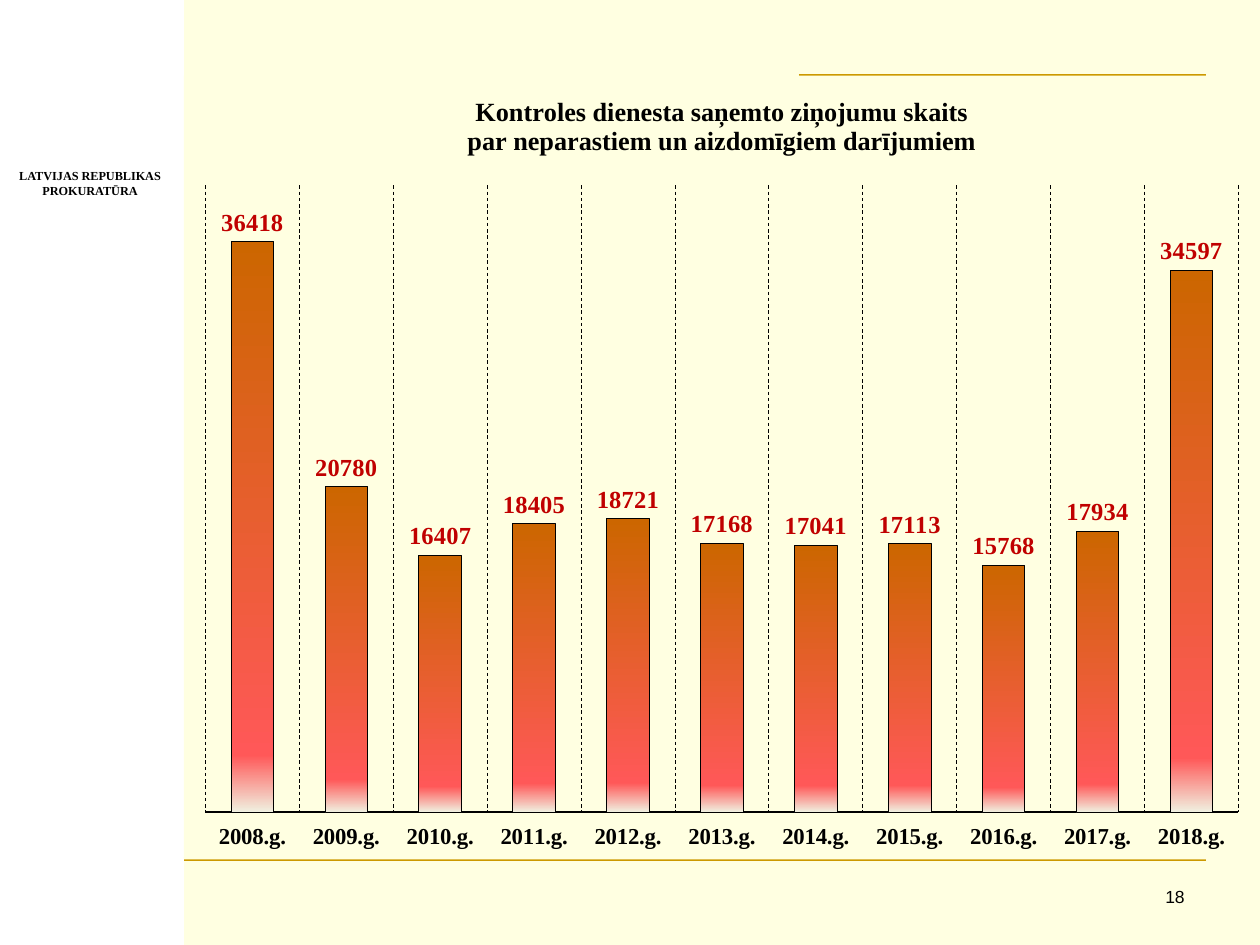
from lxml.etree import SubElement
from pptx import Presentation
from pptx.chart.data import CategoryChartData
from pptx.dml.color import RGBColor
from pptx.enum.chart import XL_CHART_TYPE, XL_LABEL_POSITION, XL_TICK_LABEL_POSITION, XL_TICK_MARK
from pptx.enum.dml import MSO_LINE
from pptx.enum.shapes import MSO_CONNECTOR, MSO_SHAPE
from pptx.enum.text import PP_ALIGN
from pptx.oxml import parse_xml
from pptx.oxml.ns import nsdecls, qn
from pptx.util import Inches, Pt

REPORTS = {
    "2008.g.": 36418, "2009.g.": 20780, "2010.g.": 16407, "2011.g.": 18405,
    "2012.g.": 18721, "2013.g.": 17168, "2014.g.": 17041, "2015.g.": 17113,
    "2016.g.": 15768, "2017.g.": 17934, "2018.g.": 34597,
}
CHART_TITLE = ["Kontroles dienesta saņemto ziņojumu skaits",
               "par neparastiem un aizdomīgiem darījumiem"]
BAR_STOPS = [(0, "CC6600"), (90, "FF5858"), (100, "F0F0E0")]


def color(value):
    return RGBColor.from_string(value)


def box(values):
    return [Inches(value) for value in values]


def set_layout(parent, **settings):
    """Give a chart title or plot area a fixed place, in fractions of the chart."""
    layout = parent.find(qn("c:layout"))
    if layout is None:
        layout = parse_xml(f'<c:layout {nsdecls("c")}/>')
        parent.insert(0 if parent.find(qn("c:tx")) is None else 1, layout)
    manual = SubElement(layout, qn("c:manualLayout"))
    for name, value in settings.items():
        SubElement(manual, qn(f"c:{name}")).set("val", str(value))


def set_gradient(properties, stops):
    """Fill with colour stops running from top to bottom."""
    stop_xml = "".join(
        f'<a:gs pos="{position * 1000}"><a:srgbClr val="{value}"/></a:gs>'
        for position, value in stops)
    properties.insert(0, parse_xml(
        f'<a:gradFill {nsdecls("a")} rotWithShape="1"><a:gsLst>{stop_xml}</a:gsLst>'
        '<a:lin ang="5400000" scaled="0"/></a:gradFill>'))


class SlideBuilder:
    background = "FFFFE1"
    panel = "FFFFFF"
    rule = "CC9900"
    text = "000000"
    serif = "Times New Roman"
    sans = "Arial"

    def __init__(self, presentation):
        self.slide = presentation.slides.add_slide(presentation.slide_layouts[6])
        fill = self.slide.background.fill
        fill.solid()
        fill.fore_color.rgb = color(self.background)

    def style_font(self, font, value=None, **formats):
        formats = {"name": self.serif, "bold": True, **formats}
        for name, setting in formats.items():
            setattr(font, name, setting)
        font.color.rgb = color(value or self.text)

    def style_line(self, line, value, width):
        line.color.rgb = color(value)
        line.width = Pt(width)

    def add_panel(self, place):
        shape = self.slide.shapes.add_shape(MSO_SHAPE.RECTANGLE, *box(place))
        shape.shadow.inherit = False
        shape.fill.solid()
        shape.fill.fore_color.rgb = color(self.panel)
        shape.line.fill.background()

    def add_rule(self, left, right, top):
        connector = self.slide.shapes.add_connector(
            MSO_CONNECTOR.STRAIGHT, *box((left, top, right, top)))
        self.style_line(connector.line, self.rule, 2.25)
        SubElement(connector._element.spPr, qn("a:effectLst"))

    def add_text(self, place, lines, alignment, wrap=True, **formats):
        frame = self.slide.shapes.add_textbox(*box(place)).text_frame
        frame.word_wrap = wrap
        frame.text = "\n".join(lines)
        for paragraph in frame.paragraphs:
            paragraph.alignment = alignment
            self.style_font(paragraph.font, **formats)

    def add_column_chart(self, place, title, values):
        data = CategoryChartData()
        data.categories = list(values)
        data.add_series("Series 1", list(values.values()))
        chart = self.slide.shapes.add_chart(
            XL_CHART_TYPE.COLUMN_CLUSTERED, *box(place), data).chart
        chart.has_legend = False
        self.style_font(chart.font, size=Pt(10), bold=False)
        chart._chartSpace.chart.addnext(parse_xml(
            f'<c:spPr {nsdecls("c", "a")}><a:solidFill><a:srgbClr val="{self.background}"/>'
            '</a:solidFill><a:ln><a:noFill/></a:ln></c:spPr>'))
        self.style_chart_title(chart, title)
        self.style_axes(chart)
        self.style_columns(chart.plots[0])
        set_layout(chart._chartSpace.chart.plotArea, layoutTarget="inner", xMode="edge",
                   yMode="edge", x=0.02, y=0.14, w=0.96, h=0.8)

    def style_chart_title(self, chart, lines):
        frame = chart.chart_title.text_frame
        frame.text = "\n".join(lines)
        for paragraph in frame.paragraphs:
            paragraph.alignment = PP_ALIGN.CENTER
            for run in paragraph.runs:
                self.style_font(run.font, size=Pt(15))
        set_layout(chart.chart_title._element, xMode="edge", yMode="edge", x=0.26, y=0.02)

    def style_axes(self, chart):
        axis = chart.category_axis
        axis.major_tick_mark = axis.minor_tick_mark = XL_TICK_MARK.NONE
        axis.tick_label_position = XL_TICK_LABEL_POSITION.LOW
        self.style_font(axis.tick_labels.font, size=Pt(13))
        self.style_line(axis.format.line, self.text, 1.5)
        axis.has_major_gridlines = True
        grid = axis.major_gridlines.format.line
        self.style_line(grid, self.text, 0.5)
        grid.dash_style = MSO_LINE.DASH
        value_axis = chart.value_axis
        value_axis.minimum_scale, value_axis.maximum_scale = 0, 40000
        value_axis.has_major_gridlines = False
        value_axis.visible = False

    def style_columns(self, plot):
        plot.gap_width, plot.overlap = 120, -27
        plot.vary_by_categories = False
        series = plot.series[0]
        self.style_line(series.format.line, self.text, 0.5)
        set_gradient(series._element.spPr, BAR_STOPS)
        plot.has_data_labels = True
        labels = plot.data_labels
        labels.show_value = True
        labels.position = XL_LABEL_POSITION.OUTSIDE_END
        self.style_font(labels.font, "C00000", size=Pt(14))


def main():
    presentation = Presentation()
    presentation.slide_width, presentation.slide_height = Inches(10), Inches(7.5)
    builder = SlideBuilder(presentation)
    builder.add_panel((0, 0, 1.46, 7.5))
    builder.add_rule(1.46, 9.57, 6.82)
    builder.add_rule(6.34, 9.57, 0.6)
    builder.add_text((0.05, 1.29, 1.33, 0.33), ["LATVIJAS REPUBLIKAS", "PROKURATŪRA"],
                     PP_ALIGN.CENTER, wrap=False, size=Pt(7))
    builder.add_text((7.42, 6.98, 2.08, 0.35), ["18"], PP_ALIGN.RIGHT,
                     size=Pt(10), name=builder.sans, bold=False)
    builder.add_column_chart((1.46, 0.6, 8.54, 6.22), CHART_TITLE, REPORTS)
    presentation.save("out.pptx")


if __name__ == "__main__":
    main()
